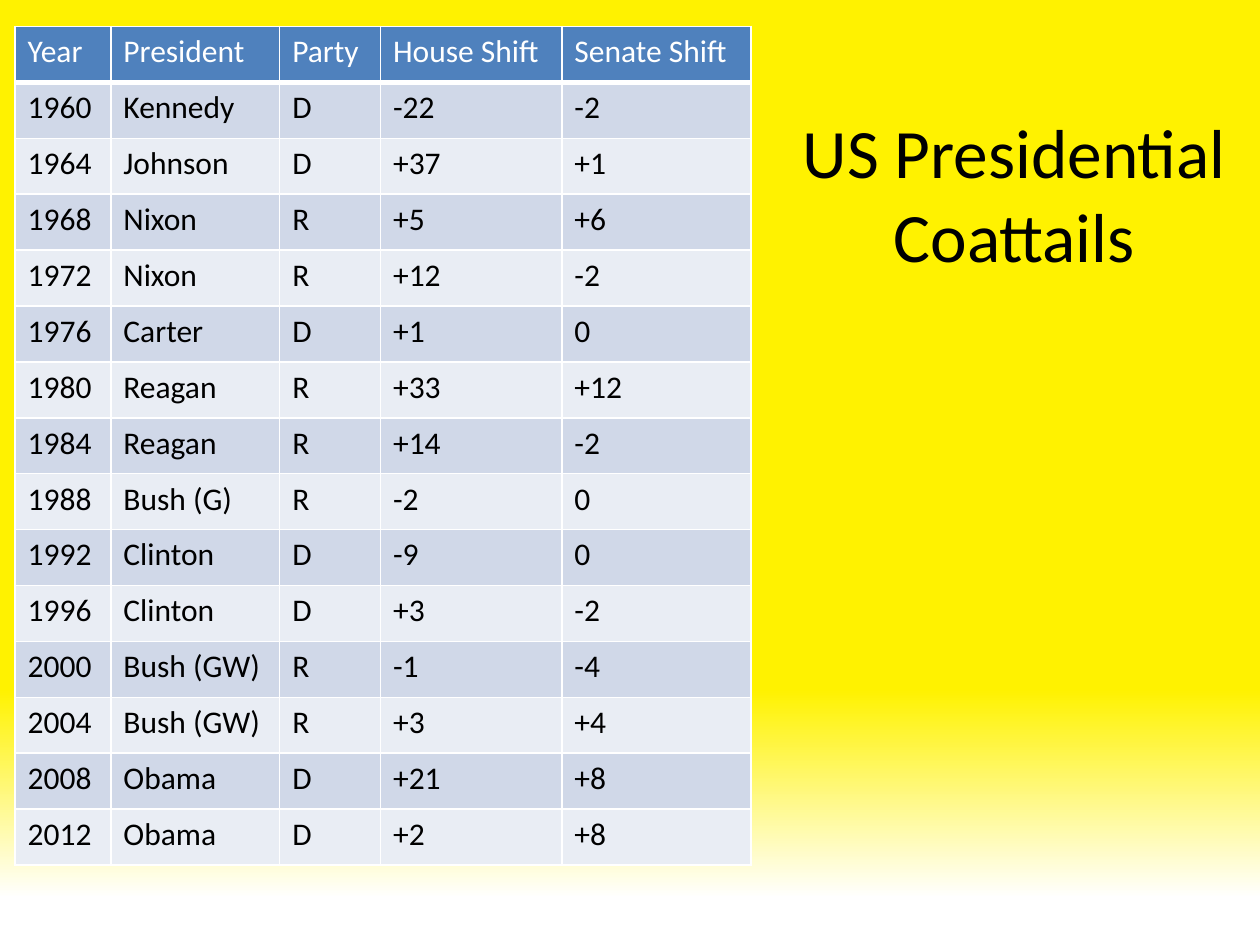
from lxml.etree import SubElement
from pptx import Presentation
from pptx.dml.color import RGBColor
from pptx.enum.text import MSO_ANCHOR, MSO_AUTO_SIZE, PP_ALIGN
from pptx.oxml.ns import qn
from pptx.util import Inches, Pt

COLORS = {
    "yellow": "FFF200",
    "white": "FFFFFF",
    "black": "000000",
    "header": "4F81BD",
    "odd_band": "D0D8E8",
    "even_band": "E9EDF4",
}
GRID_COLUMNS, GRID_ROWS = 100, 75

HEADINGS = ("Year", "President", "Party", "House Shift", "Senate Shift")
ELECTIONS = [
    ("1960", "Kennedy", "D", "-22", "-2"),
    ("1964", "Johnson", "D", "+37", "+1"),
    ("1968", "Nixon", "R", "+5", "+6"),
    ("1972", "Nixon", "R", "+12", "-2"),
    ("1976", "Carter", "D", "+1", "0"),
    ("1980", "Reagan", "R", "+33", "+12"),
    ("1984", "Reagan", "R", "+14", "-2"),
    ("1988", "Bush (G)", "R", "-2", "0"),
    ("1992", "Clinton", "D", "-9", "0"),
    ("1996", "Clinton", "D", "+3", "-2"),
    ("2000", "Bush (GW)", "R", "-1", "-4"),
    ("2004", "Bush (GW)", "R", "+3", "+4"),
    ("2008", "Obama", "D", "+21", "+8"),
    ("2012", "Obama", "D", "+2", "+8"),
]
COLUMN_WIDTHS = (7.6, 13.4, 8, 14.4, 15)


class SlideBuilder:
    font = "Calibri"

    def __init__(self, presentation):
        self.column = presentation.slide_width / GRID_COLUMNS
        self.row = presentation.slide_height / GRID_ROWS
        self.slide = presentation.slides.add_slide(presentation.slide_layouts[5])

    def place(self, left, top, width, height):
        return (int(left * self.column), int(top * self.row),
                int(width * self.column), int(height * self.row))

    def style(self, paragraph, size, color):
        for run in paragraph.runs:
            run.font.name = self.font
            run.font.size = Pt(size)
            run.font.bold = False
            run.font.color.rgb = RGBColor.from_string(COLORS[color])

    def background(self, stops):
        fill = self.slide.background.fill
        fill.gradient()
        fill.gradient_angle = 270
        for stop, (position, color) in zip(fill.gradient_stops, stops):
            stop.position = position
            stop.color.rgb = RGBColor.from_string(COLORS[color])

    def title(self, text, box, size):
        title = self.slide.shapes.title
        title.left, title.top, title.width, title.height = self.place(*box)
        frame = title.text_frame
        frame.text = text
        frame.word_wrap = True
        frame.auto_size = MSO_AUTO_SIZE.NONE
        frame.vertical_anchor = MSO_ANCHOR.MIDDLE
        frame.paragraphs[0].alignment = PP_ALIGN.CENTER
        self.style(frame.paragraphs[0], size, "black")

    def borders(self, cell, bottom_width):
        properties = cell._tc.get_or_add_tcPr()
        widths = {"a:lnL": 1, "a:lnR": 1, "a:lnT": 1, "a:lnB": bottom_width}
        for index, (side, width) in enumerate(widths.items()):
            line = SubElement(properties, qn(side), w=str(Pt(width)))
            SubElement(SubElement(line, qn("a:solidFill")), qn("a:srgbClr"),
                       val=COLORS["white"])
            properties.insert(index, line)

    def table(self, records, left, top, widths, row_height, size):
        box = self.place(left, top, sum(widths), row_height * len(records))
        table = self.slide.shapes.add_table(len(records), len(widths), *box).table
        for column, width in zip(table.columns, widths):
            column.width = int(width * self.column)
        for r, record in enumerate(records):
            table.rows[r].height = int(row_height * self.row)
            band = "header" if r == 0 else "odd_band" if r % 2 else "even_band"
            for c, value in enumerate(record):
                cell = table.cell(r, c)
                cell.text_frame.text = value
                self.style(cell.text_frame.paragraphs[0], size,
                           "black" if r else "white")
                cell.fill.solid()
                cell.fill.fore_color.rgb = RGBColor.from_string(COLORS[band])
                self.borders(cell, 1 if r else 3)


def main():
    presentation = Presentation()
    presentation.slide_width = Inches(10)
    presentation.slide_height = Inches(7.5)
    builder = SlideBuilder(presentation)
    builder.background([(0.73, "yellow"), (0.95, "white")])
    builder.title("US Presidential Coattails", (61, 9.2, 39, 12.2), 39.6)
    builder.table([HEADINGS, *ELECTIONS], 1.2, 2.1, COLUMN_WIDTHS, 4.44, 18)
    presentation.save("out.pptx")


if __name__ == "__main__":
    main()
